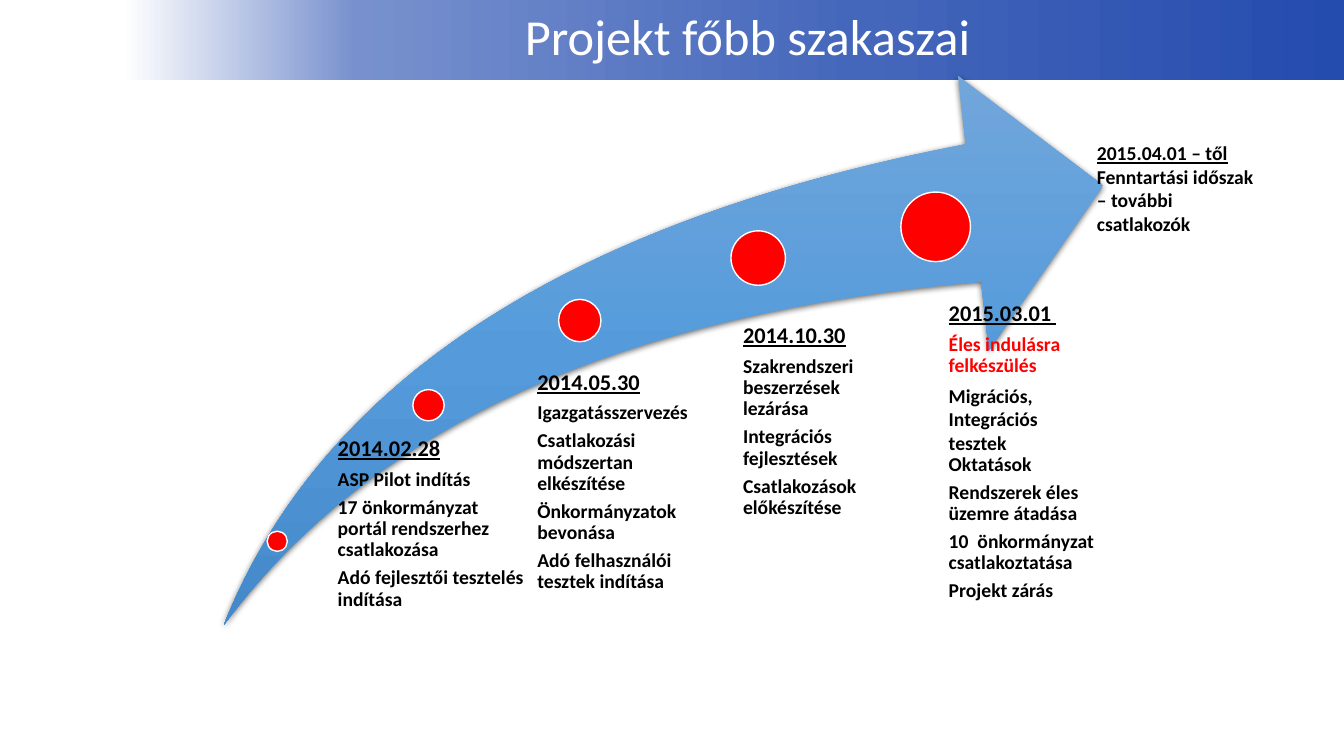
import copy

import pptx
import pptx.dml.color
import pptx.enum.shapes
import pptx.enum.text
import pptx.oxml
import pptx.oxml.ns
import pptx.util

Inches = pptx.util.Inches
Pt = pptx.util.Pt
SHAPE = pptx.enum.shapes.MSO_SHAPE
ALIGN = pptx.enum.text.PP_ALIGN
ANCHOR = pptx.enum.text.MSO_ANCHOR
SHADOW = (
    '<a:effectLst xmlns:a="http://schemas.openxmlformats.org/drawingml/2006/main">'
    '<a:outerShdw blurRad="57150" dist="19050" dir="5400000" algn="ctr" rotWithShape="0">'
    '<a:srgbClr val="000000"><a:alpha val="63000"/></a:srgbClr>'
    '</a:outerShdw></a:effectLst>')


def rgb(code):
    return pptx.dml.color.RGBColor.from_string(code)


class Deck:
    font = "Calibri"
    black, white, red = "000000", "FFFFFF", "FF0000"

    def __init__(self):
        self.prs = pptx.Presentation()
        self.prs.slide_width = Inches(13.33)
        self.prs.slide_height = Inches(7.5)
        self.slide = self.prs.slides.add_slide(self.prs.slide_layouts[6])

    def shape(self, kind, box):
        item = self.slide.shapes.add_shape(kind, *map(Inches, box))
        item.shadow.inherit = False
        item.line.fill.background()
        return item

    def blend(self, item, stops, angle):
        """Fill with a linear gradient of (position, colour) stops."""
        item.fill.gradient()
        item.fill.gradient_angle = angle
        held = item._element.spPr.find(".//" + pptx.oxml.ns.qn("a:gsLst"))
        while len(held) < len(stops):
            held.append(copy.deepcopy(held[0]))
        for stop, (pos, code) in zip(item.fill.gradient_stops, stops):
            stop.position = pos
            stop.color.rgb = rgb(code)

    def cast(self, item):
        """Give the shape a soft drop shadow."""
        item.shadow.inherit = False
        old = item._element.spPr.find(pptx.oxml.ns.qn("a:effectLst"))
        old.getparent().replace(old, pptx.oxml.parse_xml(SHADOW))

    def dot(self, x, y, size):
        """Draw a milestone centred at x, y."""
        item = self.shape(SHAPE.OVAL, (x - size / 2, y - size / 2, size, size))
        item.fill.solid()
        item.fill.fore_color.rgb = rgb(self.red)
        item.line.color.rgb = rgb(self.white)
        item.line.width = Pt(1)

    def frame(self, box, pads, anchor=ANCHOR.TOP):
        text = self.slide.shapes.add_textbox(*map(Inches, box)).text_frame
        text.word_wrap = True
        text.vertical_anchor = anchor
        (text.margin_left, text.margin_top,
         text.margin_right, text.margin_bottom) = map(Inches, pads)
        return text

    def para(self, frame, words, size=14, code=black, bold=True,
             under=False, space=0.9, after=4.9):
        first = frame.paragraphs[0]
        para = frame.add_paragraph() if first.runs else first
        para.line_spacing = space
        para.space_after = Pt(after)
        for i, line in enumerate(words.split("\n")):
            if i:
                para.add_line_break()
            run = para.add_run()
            run.text = line
            run.font.name = self.font
            run.font.size = Pt(size)
            run.font.bold = bold
            run.font.underline = under
            run.font.color.rgb = rgb(code)
        return para

    def phase(self, box, pad, date, tasks):
        """Write a dated list; each task is its text or (text, style)."""
        frame = self.frame(box, (pad, 0, 0, 0))
        self.para(frame, date, 16, under=True, after=5.6)
        for task in tasks:
            words, style = (task, {}) if isinstance(task, str) else task
            self.para(frame, words, **style)


TIGHT = {"space": 1.0, "after": 0}
DOTS = [(2.75, 5.37, 0.2), (4.25, 4.02, 0.31), (5.75, 3.18, 0.42),
        (7.52, 2.56, 0.54), (9.28, 2.25, 0.69)]
PHASES = [
    ((3.24, 4.34, 2.03, 2.15), 0.11, "2014.02.28",
     ["ASP Pilot indítás", "17 önkormányzat portál rendszerhez csatlakozása",
      "Adó fejlesztői tesztelés indítása"]),
    ((5.16, 3.68, 1.87, 2.58), 0.17, "2014.05.30",
     ["Igazgatásszervezés", "Csatlakozási módszertan\nelkészítése",
      "Önkormányzatok bevonása", "Adó felhasználói tesztek indítása"]),
    ((7.08, 3.22, 1.74, 2.85), 0.29, "2014.10.30",
     ["Szakrendszeri beszerzések lezárása", "Integrációs fejlesztések",
      "Csatlakozások előkészítése"]),
    ((9.05, 3, 2.1, 3.24), 0.36, "2015.03.01 ",
     [("Éles indulásra felkészülés", {"code": Deck.red}),
      ("Migrációs,", TIGHT), ("Integrációs", TIGHT), ("tesztek", TIGHT),
      "Oktatások", "Rendszerek éles üzemre átadása",
      "10  önkormányzat csatlakoztatása", "Projekt zárás"]),
]


def main():
    deck = Deck()
    band = deck.shape(SHAPE.RECTANGLE, (1.22, 0, 12.11, 0.79))
    deck.blend(band, [(0, "FFFFFF"), (0.19, "7891CE"),
                      (0.6, "4567BB"), (1, "244BAE")], 0)
    title = deck.frame((1.5, 0, 11.83, 0.77), (0.1, 0.05, 0.1, 0.05), ANCHOR.MIDDLE)
    head = deck.para(title, "Projekt főbb szakaszai", 36, deck.white, False, after=0)
    head.alignment = ALIGN.CENTER

    arrow = deck.shape(SHAPE.SWOOSH_ARROW, (2.22, 0.75, 8.72, 5.45))
    arrow.adjustments[0] = arrow.adjustments[1] = 0.25
    deck.blend(arrow, [(0, "71A6DB"), (0.5, "559BDB"), (1, "448ACA")], 270)
    deck.cast(arrow)

    for spot in DOTS:
        deck.dot(*spot)
    for phase in PHASES:
        deck.phase(*phase)

    last = deck.frame((10.78, 1.35, 1.78, 1.04), (0.1, 0.05, 0.1, 0.05))
    deck.para(last, "2015.04.01 – től", under=True, **TIGHT)
    deck.para(last, "Fenntartási időszak – további csatlakozók", **TIGHT)
    deck.prs.save("out.pptx")


if __name__ == "__main__":
    main()
